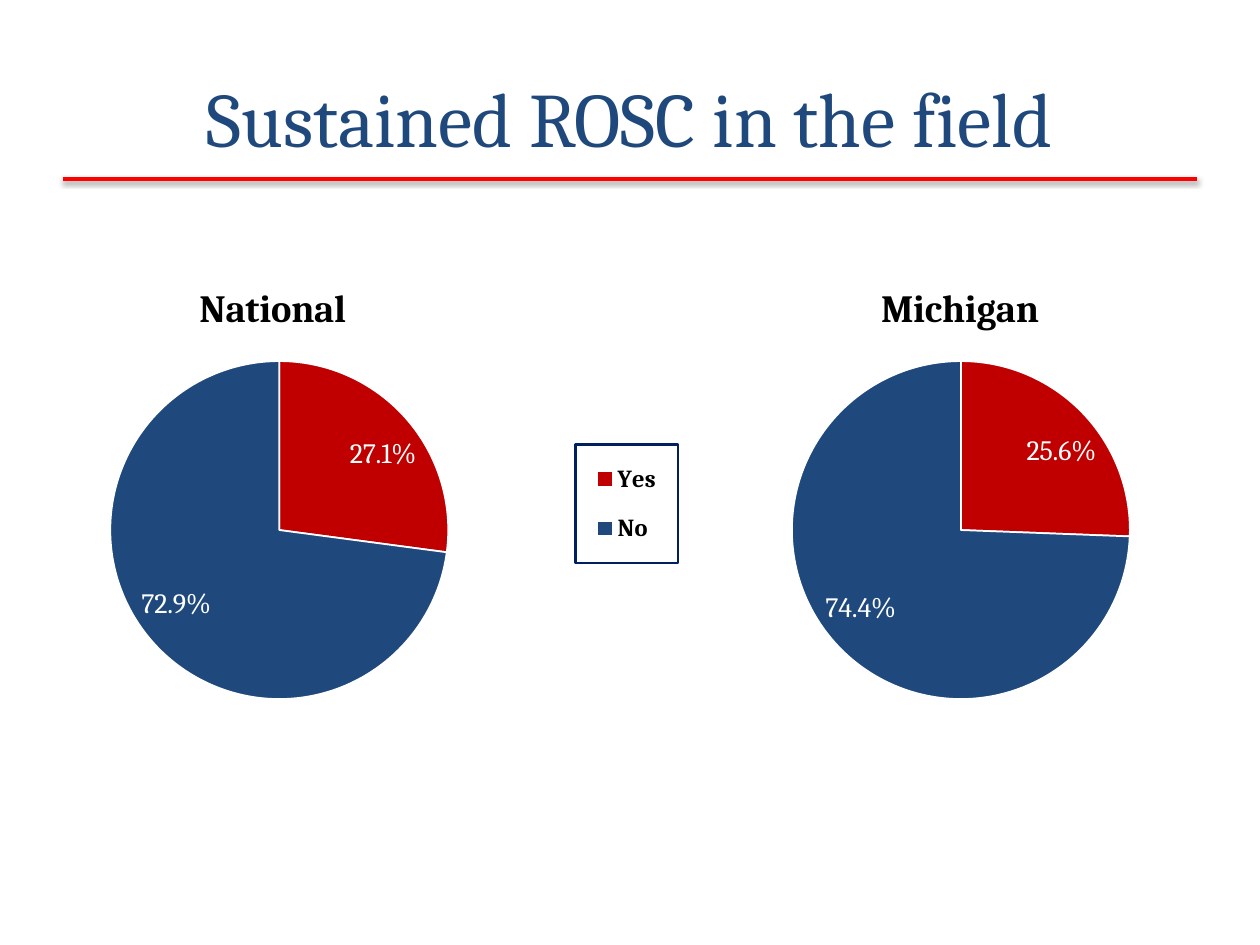
from dataclasses import dataclass

from lxml import etree
from pptx import Presentation
from pptx.chart.data import CategoryChartData
from pptx.dml.color import RGBColor
from pptx.enum.chart import XL_CHART_TYPE, XL_LABEL_POSITION, XL_LEGEND_POSITION
from pptx.enum.shapes import MSO_CONNECTOR
from pptx.enum.text import MSO_ANCHOR, PP_ALIGN
from pptx.oxml import parse_xml
from pptx.oxml.ns import nsdecls, qn
from pptx.util import Inches, Pt

PIE = XL_CHART_TYPE.PIE
FIT = XL_LABEL_POSITION.BEST_FIT
RIGHT = XL_LEGEND_POSITION.RIGHT
STRAIGHT = MSO_CONNECTOR.STRAIGHT
MIDDLE = MSO_ANCHOR.MIDDLE
CENTER = PP_ALIGN.CENTER


@dataclass(frozen=True)
class Theme:
    font: str = "Cambria"
    navy: str = "1F497D"
    crimson: str = "C00000"
    rule: str = "FF0000"
    border: str = "002060"
    black: str = "000000"
    white: str = "FFFFFF"
    title: int = 44
    head: int = 22
    base: int = 18
    label: int = 16
    key: int = 14


@dataclass(frozen=True)
class Pie:
    name: str
    left: float
    names: tuple[str, ...]
    values: tuple[float, ...]
    legend: bool


THEME = Theme()
PIES = (
    Pie("National", 0.17, ("Yes", "No"), (27.1, 72.9), True),
    Pie("Michigan", 5.58, ("1", "2"), (25.6, 74.4), False),
)


def style(font, size: int, color: str, bold: bool = False) -> None:
    font.name = THEME.font
    font.size = Pt(size)
    font.bold = bold
    font.color.rgb = RGBColor.from_string(color)


def place(part, index: int, target: str = "", **box: float) -> None:
    """Give a chart part a manual layout in fractions of the chart."""
    layout = part.find(qn("c:layout"))
    if layout is None:
        layout = etree.Element(qn("c:layout"))
        part.insert(index, layout)
    for child in list(layout):
        layout.remove(child)
    manual = etree.SubElement(layout, qn("c:manualLayout"))
    tags = {"layoutTarget": target} if target else {}
    tags |= {"xMode": "edge", "yMode": "edge"}
    tags |= {key: str(value) for key, value in box.items()}
    for tag, value in tags.items():
        etree.SubElement(manual, qn(f"c:{tag}")).set("val", value)


def add_title(slide, text: str) -> None:
    title = slide.shapes.title
    title.left, title.top = Inches(0.5), Inches(0.3)
    title.width, title.height = Inches(9), Inches(1.25)
    frame = title.text_frame
    frame.vertical_anchor = MIDDLE
    para = frame.paragraphs[0]
    para.alignment = CENTER
    run = para.add_run()
    run.text = text
    style(run.font, THEME.title, THEME.navy)


def add_rule(slide) -> None:
    y = Inches(1.42)
    rule = slide.shapes.add_connector(STRAIGHT, Inches(0.5), y, Inches(9.5), y)
    rule.line.width = Pt(2)
    rule.line.color.rgb = RGBColor.from_string(THEME.rule)
    rule._element.spPr.append(parse_xml(
        f'<a:effectLst {nsdecls("a")}>'
        f'<a:outerShdw blurRad="{Pt(3.1)}" dist="{Pt(1.6)}" dir="5400000" rotWithShape="0">'
        f'<a:srgbClr val="{THEME.black}"><a:alpha val="38000"/></a:srgbClr>'
        '</a:outerShdw></a:effectLst>'))


def add_legend(chart) -> None:
    chart.has_legend = True
    legend = chart.legend
    legend.position = RIGHT
    legend.include_in_layout = False
    style(legend.font, THEME.key, THEME.black, bold=True)
    root = legend._element
    place(root, 1, x=0.81, y=0.41, w=0.15, h=0.19)
    root.find(qn("c:overlay")).addnext(parse_xml(
        f'<c:spPr {nsdecls("c", "a")}><a:ln w="{Pt(1.5)}"><a:solidFill>'
        f'<a:srgbClr val="{THEME.border}"/></a:solidFill></a:ln></c:spPr>'))


def add_pie(slide, pie: Pie) -> None:
    data = CategoryChartData()
    data.categories = pie.names
    data.add_series("Series 1", pie.values)
    chart = slide.shapes.add_chart(
        PIE, Inches(pie.left), Inches(1.5), Inches(5.43), Inches(4.95), data).chart
    style(chart.font, THEME.base, THEME.black)

    chart.has_title = True
    run = chart.chart_title.text_frame.paragraphs[0].add_run()
    run.text = pie.name
    style(run.font, THEME.head, THEME.black, bold=True)
    place(chart.chart_title._element, 1, x=0.25, y=0.14)

    plot = chart.plots[0]
    plot.vary_by_categories = True
    place(plot._element.getparent(), 0, "inner", x=0.103, y=0.276, w=0.548, h=0.542)
    series = plot.series[0]
    for i, color in enumerate((THEME.crimson, THEME.navy)):
        form = series.points[i].format
        form.fill.solid()
        form.fill.fore_color.rgb = RGBColor.from_string(color)
        form.line.width = Pt(1)
        form.line.color.rgb = RGBColor.from_string(THEME.white)

    labels = series.data_labels
    labels.show_value = False
    labels.show_percentage = True
    labels.number_format = "0.0%"
    labels.number_format_is_linked = False
    labels.position = FIT
    style(labels.font, THEME.label, THEME.white)

    chart.has_legend = False
    if pie.legend:
        add_legend(chart)


def main() -> None:
    deck = Presentation()
    deck.slide_width, deck.slide_height = Inches(10), Inches(7.5)
    slide = deck.slides.add_slide(deck.slide_layouts[5])
    add_rule(slide)
    add_title(slide, "Sustained ROSC in the field")
    for pie in PIES:
        add_pie(slide, pie)
    deck.save("out.pptx")


if __name__ == "__main__":
    main()
